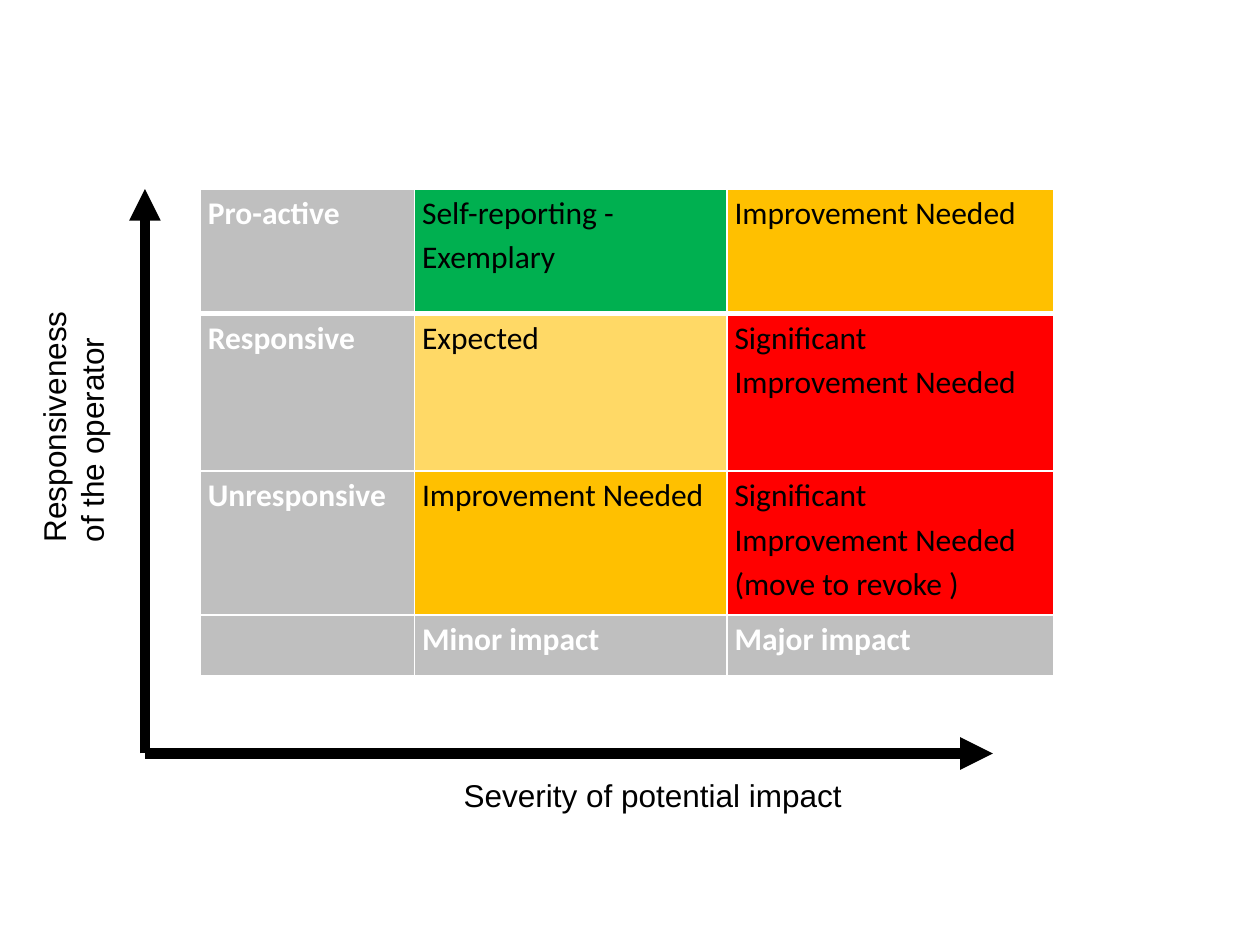
from lxml import etree
from pptx import Presentation
from pptx import util as u
from pptx.dml.color import RGBColor
from pptx.enum import shapes, text
from pptx.oxml import ns

WHITE = RGBColor(0xFF, 0xFF, 0xFF)
BLACK = RGBColor(0, 0, 0)
GREY = RGBColor(0xBF, 0xBF, 0xBF)
GREEN = RGBColor(0x00, 0xB0, 0x50)
YELLOW = RGBColor(0xFF, 0xD9, 0x66)
AMBER = RGBColor(0xFF, 0xC0, 0x00)
RED = RGBColor(0xFF, 0, 0)

MATRIX = [
    [("Pro-active", GREY), ("Self-reporting - Exemplary", GREEN), ("Improvement Needed", AMBER)],
    [("Responsive", GREY), ("Expected", YELLOW), ("Significant Improvement Needed", RED)],
    [("Unresponsive", GREY), ("Improvement Needed", AMBER),
     ("Significant Improvement Needed (move to revoke )", RED)],
    [("", GREY), ("Minor impact", GREY), ("Major impact", GREY)],
]
COLUMNS = [1.7, 2.48, 2.59]
ROWS = [0.99, 1.25, 1.14, 0.48]
LEFT, TOP = 1.59, 1.5
ORIGIN = (1.15, 5.98)
AXES = [((1.15, TOP), 6), ((7.88, 5.98), 6.25)]
LABELS = [
    (["Responsiveness", "of the operator"], (-0.65, 2.81, 2.45, 0.68), 270),
    (["Severity of potential impact"], (3.61, 6.12, 3.33, 0.38), 0),
]
CELL_FORMAT = {"margin_left": u.Inches(0.06), "margin_right": u.Inches(0.06),
               "margin_top": 0, "margin_bottom": 0}
LABEL_FORMAT = {"margin_left": u.Inches(0.07), "margin_right": u.Inches(0.07),
                "margin_top": u.Inches(0.04), "margin_bottom": u.Inches(0.04),
                "word_wrap": True, "auto_size": text.MSO_AUTO_SIZE.SHAPE_TO_FIT_TEXT}


def apply(target, values):
    for name, value in values.items():
        setattr(target, name, value)


def set_font(p, name, color, bold=False):
    apply(p.font, {"name": name, "size": u.Pt(18), "bold": bold})
    p.font.color.rgb = color


def add_borders(cell, widths):
    tc_pr = cell._tc.get_or_add_tcPr()
    for i, (side, width) in enumerate(widths.items()):
        ln = etree.Element(ns.qn("a:" + side), w=str(u.Pt(width)))
        fill = etree.SubElement(ln, ns.qn("a:solidFill"))
        etree.SubElement(fill, ns.qn("a:srgbClr"), val=str(WHITE))
        tc_pr.insert(i, ln)


def add_matrix(s):
    frame = s.shapes.add_table(len(ROWS), len(COLUMNS), u.Inches(LEFT), u.Inches(TOP),
                               u.Inches(sum(COLUMNS)), u.Inches(sum(ROWS)))
    table = frame.table
    for column, width in zip(table.columns, COLUMNS):
        column.width = u.Inches(width)
    for r, (height, cells) in enumerate(zip(ROWS, MATRIX)):
        table.rows[r].height = u.Inches(height)
        for c, (words, color) in enumerate(cells):
            cell = table.cell(r, c)
            apply(cell, CELL_FORMAT)
            cell.fill.solid()
            cell.fill.fore_color.rgb = color
            add_borders(cell, {"lnL": 1, "lnR": 1, "lnT": 3 if r == 1 else 1,
                               "lnB": 3 if r == 0 else 1})
            p = cell.text_frame.paragraphs[0]
            p.text = words
            p.line_spacing = 1.15
            heading = color == GREY
            set_font(p, "Calibri", WHITE if heading else BLACK, heading)


def add_axis(s, end, width):
    points = [u.Inches(v) for v in ORIGIN + end]
    axis = s.shapes.add_connector(shapes.MSO_CONNECTOR.STRAIGHT, *points)
    axis.line.color.rgb = BLACK
    axis.line.width = u.Pt(width)
    etree.SubElement(axis.line._get_or_add_ln(), ns.qn("a:tailEnd"), type="triangle")
    etree.SubElement(axis._element.spPr, ns.qn("a:effectLst"))


def add_label(s, lines, box, rotation):
    sp = s.shapes.add_textbox(*[u.Inches(v) for v in box])
    sp.rotation = rotation
    sp.fill.solid()
    sp.fill.fore_color.rgb = WHITE
    tf = sp.text_frame
    apply(tf, LABEL_FORMAT)
    tf.text = "\n".join(lines)
    for p in tf.paragraphs:
        set_font(p, "Arial", BLACK)


def main():
    prs = Presentation()
    prs.slide_width, prs.slide_height = u.Inches(10), u.Inches(7.5)
    s = prs.slides.add_slide(prs.slide_layouts[6])
    add_matrix(s)
    for axis, label in zip(AXES, LABELS):
        add_axis(s, *axis)
        add_label(s, *label)
    prs.save("out.pptx")


if __name__ == "__main__":
    main()
